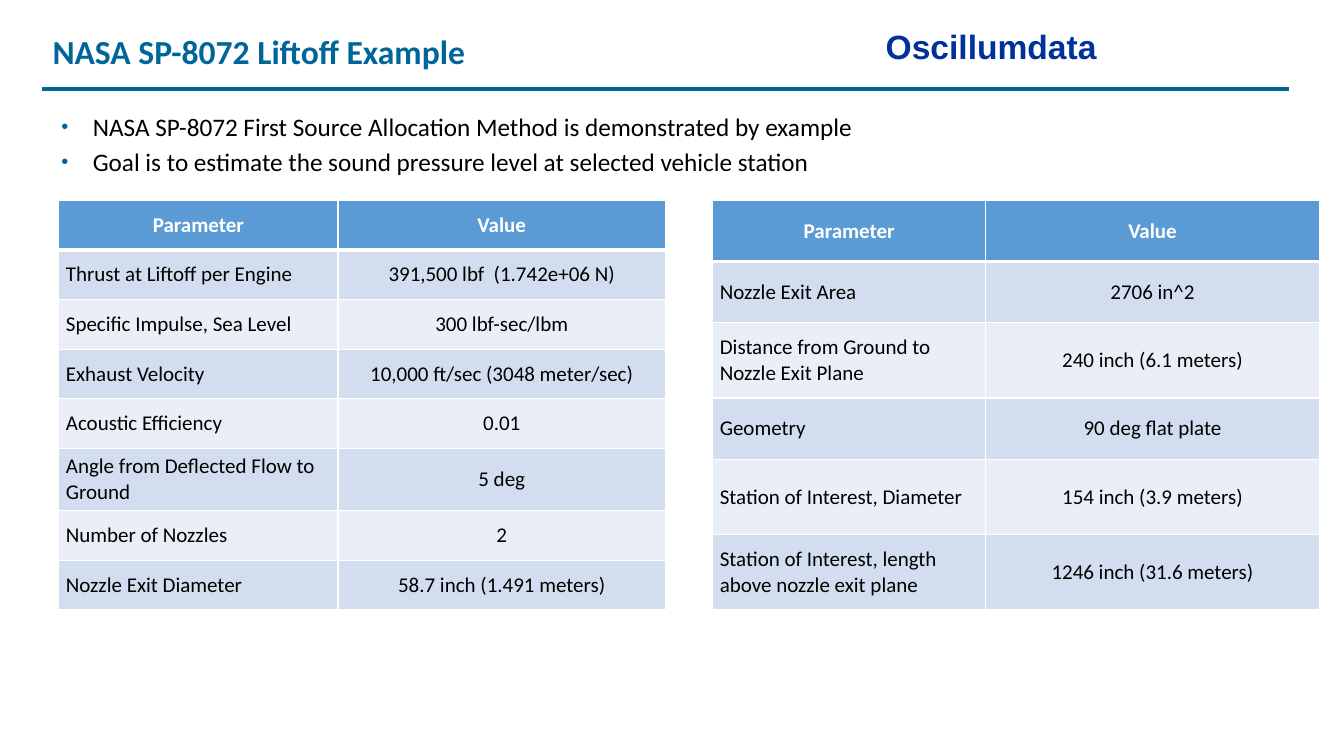
from lxml import etree
from pptx import Presentation
from pptx.dml.color import RGBColor
from pptx.enum import shapes, text
from pptx.oxml import ns
from pptx.util import Cm, Pt

TITLE = "NASA SP-8072 Liftoff Example"
BRAND = "Oscillumdata"
GOALS = [
    "NASA SP-8072 First Source Allocation Method is demonstrated by example",
    "Goal is to estimate the sound pressure level at selected vehicle station",
]
HEADER = ("Parameter", "Value")
ENGINE = [
    ("Thrust at Liftoff per Engine", "391,500 lbf  (1.742e+06 N)"),
    ("Specific Impulse, Sea Level", "300 lbf-sec/lbm"),
    ("Exhaust Velocity", "10,000 ft/sec (3048 meter/sec)"),
    ("Acoustic Efficiency", "0.01"),
    ("Angle from Deflected Flow to Ground", "5 deg"),
    ("Number of Nozzles", "2"),
    ("Nozzle Exit Diameter", "58.7 inch (1.491 meters)"),
]
STATION = [
    ("Nozzle Exit Area", "2706 in^2"),
    ("Distance from Ground to Nozzle Exit Plane", "240 inch (6.1 meters)"),
    ("Geometry", "90 deg flat plate"),
    ("Station of Interest, Diameter", "154 inch (3.9 meters)"),
    ("Station of Interest, length above nozzle exit plane", "1246 inch (31.6 meters)"),
]
# (rows, left, column widths, normal row height, tall row height, tall rows)
TABLES = [
    (ENGINE, 1.48, (7.04, 8.25), 1.25, 1.57, {5}),
    (STATION, 17.96, (6.88, 8.41), 1.54, 1.9, {2, 4, 5}),
]
TABLE_TOP = 5.05
TEAL, NAVY, BLACK, WHITE = "006699", "003399", "000000", "FFFFFF"
HEAD_FILL, BANDS = "5B9BD5", ("D2DEEF", "EAEFF7")


def rgb(value):
    return RGBColor.from_string(value)


def set_font(para, size, color, bold=False, name="Calibri"):
    font = para.font
    font.name, font.size, font.bold = name, Pt(size), bold
    font.color.rgb = rgb(color)


def add_box(slide, left, top, width, height):
    box = slide.shapes.add_textbox(Cm(left), Cm(top), Cm(width), Cm(height))
    box.text_frame.word_wrap = True
    return box.text_frame


def add_bullet(para):
    props = para._p.get_or_add_pPr()
    props.set("marL", str(Cm(0.79)))
    props.set("indent", str(-Cm(0.79)))
    color = etree.SubElement(props, ns.qn("a:buClr"))
    etree.SubElement(color, ns.qn("a:srgbClr"), val=TEAL)
    etree.SubElement(props, ns.qn("a:buSzPct"), val="80000")
    etree.SubElement(props, ns.qn("a:buFont"), typeface="Arial")
    etree.SubElement(props, ns.qn("a:buChar"), char="•")


def set_borders(cell, widths):
    """Draw white borders; widths are points for left, right, top, bottom."""
    props = cell._tc.get_or_add_tcPr()
    for index, (side, width) in enumerate(zip("LRTB", widths)):
        line = etree.Element(ns.qn(f"a:ln{side}"), w=str(Pt(width)))
        fill = etree.SubElement(line, ns.qn("a:solidFill"))
        etree.SubElement(fill, ns.qn("a:srgbClr"), val=WHITE)
        props.insert(index, line)


def format_cell(cell, content, row, column):
    is_head = row == 0
    cell.text = content
    cell.vertical_anchor = text.MSO_ANCHOR.MIDDLE
    cell.margin_left = cell.margin_right = Cm(0.18)
    cell.margin_top = cell.margin_bottom = 0
    cell.fill.solid()
    cell.fill.fore_color.rgb = rgb(HEAD_FILL if is_head else BANDS[(row - 1) % 2])
    para = cell.text_frame.paragraphs[0]
    centred = is_head or column == 1
    para.alignment = text.PP_ALIGN.CENTER if centred else text.PP_ALIGN.LEFT
    set_font(para, 15, WHITE if is_head else BLACK, bold=is_head)
    set_borders(cell, (1, 1, 3 if row == 1 else 1, 3 if is_head else 1))


def add_parameters(slide, body, left, widths, normal, tall, tall_rows):
    rows = [HEADER, *body]
    heights = [tall if row in tall_rows else normal for row in range(len(rows))]
    table = slide.shapes.add_table(len(rows), len(HEADER), Cm(left), Cm(TABLE_TOP),
                                   Cm(sum(widths)), Cm(sum(heights))).table
    for column, width in zip(table.columns, widths):
        column.width = Cm(width)
    for row, (height, contents) in enumerate(zip(heights, rows)):
        table.rows[row].height = Cm(height)
        for column, content in enumerate(contents):
            format_cell(table.cell(row, column), content, row, column)


def main():
    deck = Presentation()
    deck.slide_width, deck.slide_height = Cm(33.87), Cm(19.05)
    slide = deck.slides.add_slide(deck.slide_layouts[5])

    title = slide.shapes.title
    title.left, title.top, title.width, title.height = Cm(1.07), Cm(0.66), Cm(17.91), Cm(1.28)
    title.text = TITLE
    title.text_frame.auto_size = text.MSO_AUTO_SIZE.NONE
    title.text_frame.vertical_anchor = text.MSO_ANCHOR.TOP
    heading = title.text_frame.paragraphs[0]
    heading.alignment = text.PP_ALIGN.LEFT
    set_font(heading, 24, TEAL, bold=True)

    brand = add_box(slide, 22.07, 0.53, 5.92, 1.28)
    brand.word_wrap = False
    brand.text = BRAND
    set_font(brand.paragraphs[0], 24, NAVY, bold=True, name="Arial")

    rule = slide.shapes.add_connector(shapes.MSO_CONNECTOR.STRAIGHT,
                                      Cm(1.07), Cm(2.24), Cm(32.49), Cm(2.24))
    rule.line.color.rgb = rgb(TEAL)
    rule.line.width = Pt(2.5)
    etree.SubElement(rule._element.spPr, ns.qn("a:effectLst"))

    goals = add_box(slide, 1.3, 2.69, 26.72, 1.91)
    goals.text = "\n".join(GOALS)
    for para in goals.paragraphs:
        para.space_before = Pt(3)
        add_bullet(para)
        set_font(para, 18, BLACK)

    for spec_of_table in TABLES:
        add_parameters(slide, *spec_of_table)

    deck.save("out.pptx")


if __name__ == "__main__":
    main()
